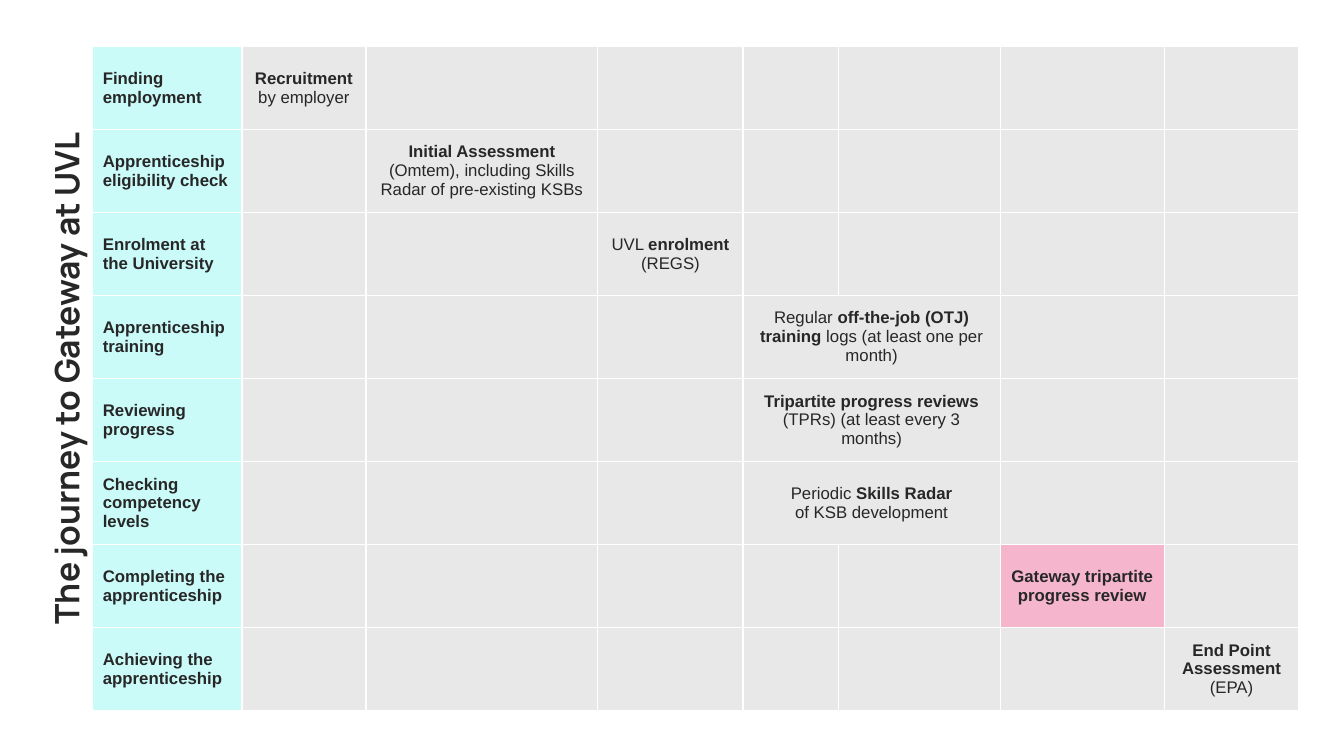
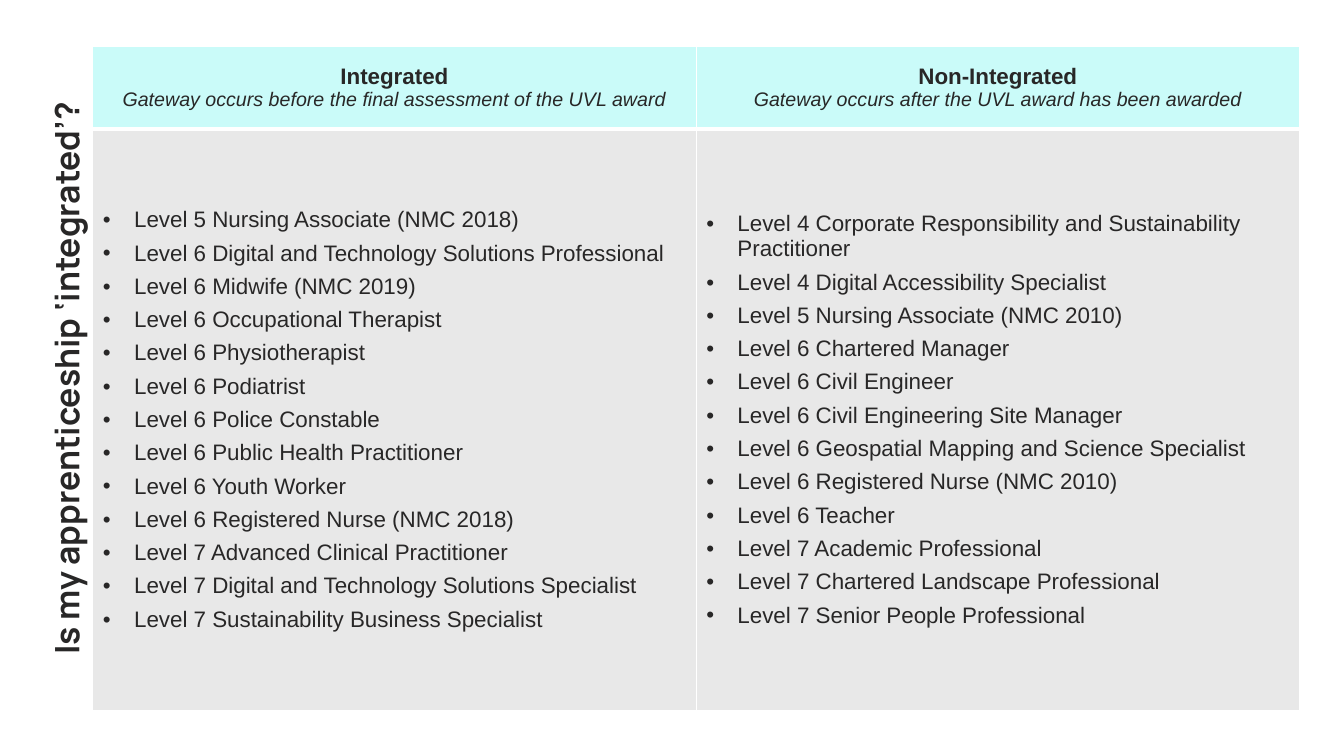
from lxml import etree
from pptx import Presentation
from pptx.dml.color import RGBColor
from pptx.enum.text import MSO_ANCHOR, PP_ALIGN
from pptx.oxml.ns import qn
from pptx.util import Inches, Pt

LEFT, CENTER = PP_ALIGN.LEFT, PP_ALIGN.CENTER
MIDDLE = MSO_ANCHOR.MIDDLE

COLORS = {
    "ink": "282727",
    "label": "CAFBF9",
    "cell": "E8E8E8",
    "gateway": "F5B6CD",
    "border": "FFFFFF",
}
BODY_FONT, TITLE_FONT = "Arial", "Manrope"
TABLE_LEFT, TABLE_TOP, TABLE_W, TABLE_H = 0.92, 0.46, 11.97, 6.59
TITLE_CENTER_X, TITLE_H = 0.68, 0.47
BULLET_INDENT = 0.31

JOURNEY_TITLE = "The journey to Gateway at UVL"
JOURNEY_COLS = [1.48, 1.23, 2.3, 1.44, 0.95, 1.6, 1.63, 1.33]
# *...* marks bold words
JOURNEY = [
    ("Finding employment", 1, 1, ["*Recruitment* by employer"], "cell"),
    ("Apprenticeship eligibility check", 2, 1,
     ["*Initial Assessment *(Omtem), including Skills Radar of pre-existing KSBs"], "cell"),
    ("Enrolment at the University", 3, 1, ["UVL *enrolment *(REGS)"], "cell"),
    ("Apprenticeship training", 4, 2,
     ["Regular *off-the-job (OTJ) training* logs (at least one per month)"], "cell"),
    ("Reviewing progress", 4, 2,
     ["*Tripartite progress reviews *(TPRs) (at least every 3 months)"], "cell"),
    ("Checking competency levels", 4, 2,
     ["Periodic *Skills Radar*", "of KSB development"], "cell"),
    ("Completing the apprenticeship", 6, 1,
     ["*Gateway tripartite progress review*"], "gateway"),
    ("Achieving the apprenticeship", 7, 1, ["*End Point Assessment *(EPA)"], "cell"),
]

TYPES_TITLE = "Is my apprenticeship ‘integrated’?"
TYPES_HEADER_H = 0.82
TYPES = [
    ("Integrated", "Gateway occurs before the final assessment of the UVL award", [
        "Level 5 Nursing Associate (NMC 2018)",
        "Level 6 Digital and Technology Solutions Professional",
        "Level 6 Midwife (NMC 2019)",
        "Level 6 Occupational Therapist",
        "Level 6 Physiotherapist",
        "Level 6 Podiatrist",
        "Level 6 Police Constable",
        "Level 6 Public Health Practitioner",
        "Level 6 Youth Worker",
        "Level 6 Registered Nurse (NMC 2018)",
        "Level 7 Advanced Clinical Practitioner",
        "Level 7 Digital and Technology Solutions Specialist",
        "Level 7 Sustainability Business Specialist",
    ]),
    ("Non-Integrated", "Gateway occurs after the UVL award has been awarded", [
        "Level 4 Corporate Responsibility and Sustainability Practitioner",
        "Level 4 Digital Accessibility Specialist",
        "Level 5 Nursing Associate (NMC 2010)",
        "Level 6 Chartered Manager",
        "Level 6 Civil Engineer",
        "Level 6 Civil Engineering Site Manager",
        "Level 6 Geospatial Mapping and Science Specialist",
        "Level 6 Registered Nurse (NMC 2010)",
        "Level 6 Teacher",
        "Level 7 Academic Professional",
        "Level 7 Chartered Landscape Professional",
        "Level 7 Senior People Professional",
    ]),
]


def add_text(tf, text, size=12, font=BODY_FONT, italic=False, align=LEFT,
             after=0, spacing=None, bullet=False):
    p = tf.add_paragraph() if tf.text else tf.paragraphs[0]
    p.alignment = align
    p.space_after = Pt(after)
    if spacing:
        p.line_spacing = spacing
    if bullet:
        pPr = p._p.get_or_add_pPr()
        pPr.set("marL", str(Inches(BULLET_INDENT)))
        pPr.set("indent", str(-Inches(BULLET_INDENT)))
        etree.SubElement(pPr, qn("a:buFont"), typeface=BODY_FONT)
        etree.SubElement(pPr, qn("a:buChar"), char="•")
    for i, part in enumerate(text.split("*")):
        if part:
            r = p.add_run()
            r.text = part
            r.font.name, r.font.size = font, Pt(size)
            r.font.bold, r.font.italic = i % 2 == 1, italic
            r.font.color.rgb = RGBColor.from_string(COLORS["ink"])


def style_cell(cell, color, top=1, bottom=1):
    cell.fill.solid()
    cell.fill.fore_color.rgb = RGBColor.from_string(COLORS[color])
    cell.vertical_anchor = MIDDLE
    tcPr = cell._tc.get_or_add_tcPr()
    sides = [("L", 1), ("R", 1), ("T", top), ("B", bottom)]
    for i, (side, width) in enumerate(sides):
        ln = etree.Element(qn(f"a:ln{side}"), w=str(Pt(width)))
        fill = etree.SubElement(ln, qn("a:solidFill"))
        etree.SubElement(fill, qn("a:srgbClr"), val=COLORS["border"])
        tcPr.insert(i, ln)


def add_titled_slide(prs, title):
    s = prs.slides.add_slide(prs.slide_layouts[6])
    sp = s.shapes.add_textbox(
        Inches(TITLE_CENTER_X - TABLE_H / 2),
        Inches(TABLE_TOP + (TABLE_H - TITLE_H) / 2),
        Inches(TABLE_H), Inches(TITLE_H))
    sp.rotation = 270
    tf = sp.text_frame
    tf.word_wrap = True
    tf.vertical_anchor = MIDDLE
    add_text(tf, f"*{title}*", size=24, font=TITLE_FONT, align=CENTER, spacing=0.9)
    return s


def add_grid(s, col_widths, row_heights):
    table = s.shapes.add_table(
        len(row_heights), len(col_widths), Inches(TABLE_LEFT), Inches(TABLE_TOP),
        Inches(TABLE_W), Inches(TABLE_H)).table
    table.first_row = table.horz_banding = False
    for col, width in zip(table.columns, col_widths):
        col.width = Inches(width)
    for row, height in zip(table.rows, row_heights):
        row.height = Inches(height)
    return table


def build_journey(prs):
    s = add_titled_slide(prs, JOURNEY_TITLE)
    table = add_grid(s, JOURNEY_COLS, [TABLE_H / len(JOURNEY)] * len(JOURNEY))
    for i, (stage, start, span, lines, color) in enumerate(JOURNEY):
        for j in range(len(JOURNEY_COLS)):
            style_cell(table.cell(i, j),
                       "label" if j == 0 else color if j == start else "cell")
        add_text(table.cell(i, 0).text_frame, f"*{stage}*")
        step = table.cell(i, start)
        if span > 1:
            step.merge(table.cell(i, start + span - 1))
        for line in lines:
            add_text(step.text_frame, line, align=CENTER)


def build_types(prs):
    s = add_titled_slide(prs, TYPES_TITLE)
    table = add_grid(s, [TABLE_W / len(TYPES)] * len(TYPES),
                     [TYPES_HEADER_H, TABLE_H - TYPES_HEADER_H])
    for j, (name, timing, courses) in enumerate(TYPES):
        header, body = table.cell(0, j), table.cell(1, j)
        style_cell(header, "label", bottom=3)
        style_cell(body, "cell", top=3)
        add_text(header.text_frame, f"*{name}*", size=16, align=CENTER)
        add_text(header.text_frame, timing, size=14, italic=True, align=CENTER)
        for course in courses:
            add_text(body.text_frame, course, size=16, after=6, bullet=True)


def main():
    prs = Presentation()
    prs.slide_width, prs.slide_height = Inches(13.33), Inches(7.5)
    build_journey(prs)
    build_types(prs)
    prs.save("out.pptx")


if __name__ == "__main__":
    main()
